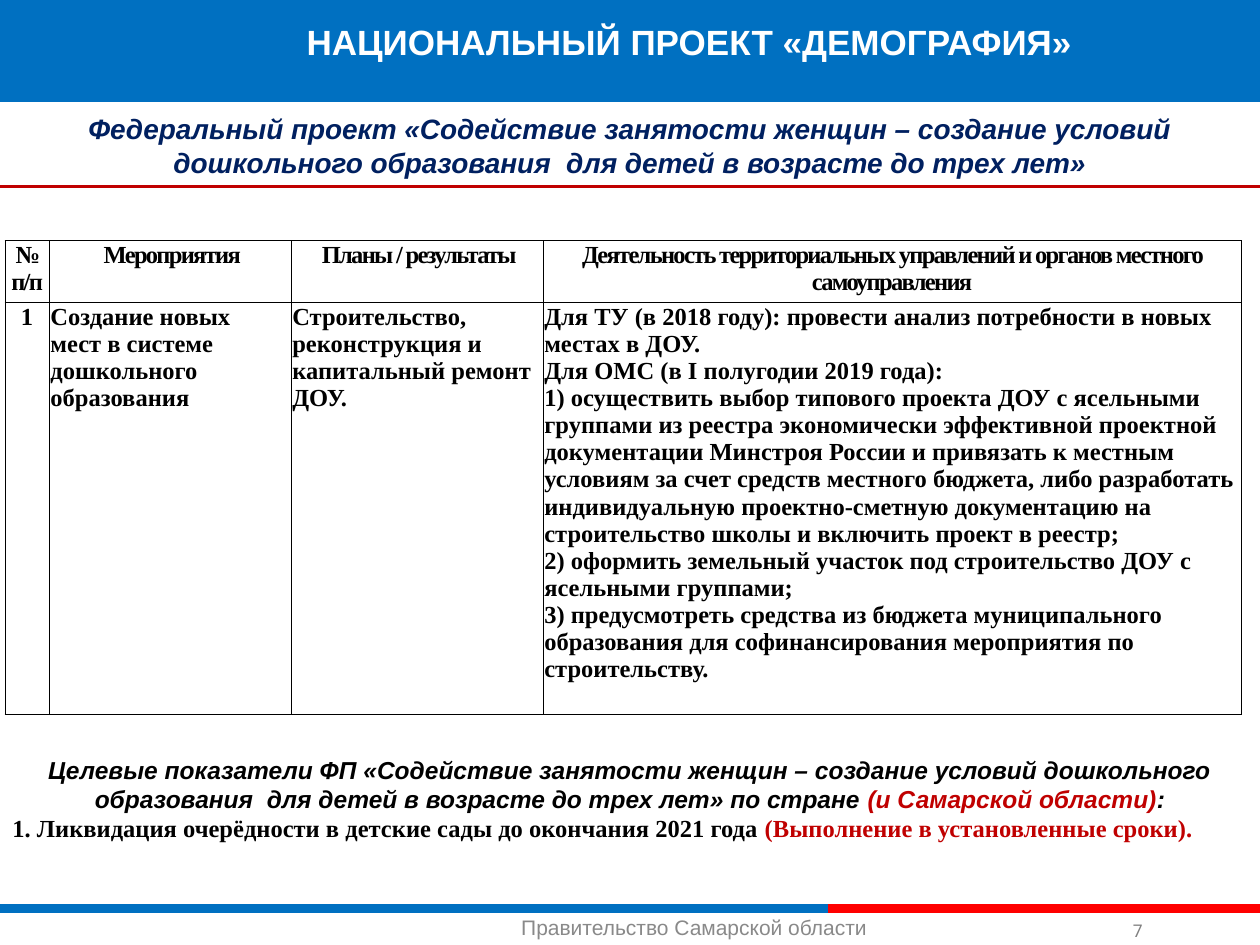
from lxml.etree import SubElement
from pptx import Presentation
from pptx.dml.color import RGBColor
from pptx.enum.shapes import MSO_CONNECTOR, MSO_SHAPE
from pptx.enum.text import MSO_ANCHOR, MSO_AUTO_SIZE, PP_ALIGN
from pptx.oxml.ns import qn
from pptx.util import Inches, Pt

BLUE = RGBColor(0x00, 0x70, 0xC1)
NAVY = RGBColor(0x00, 0x20, 0x60)
RED = RGBColor(0xFF, 0x00, 0x00)
DARK_RED = RGBColor(0xC0, 0x00, 0x00)
GRAY = RGBColor(0x89, 0x89, 0x89)
NUMBER_GRAY = RGBColor(0x80, 0x80, 0x80)
BLACK = RGBColor(0x00, 0x00, 0x00)
WHITE = RGBColor(0xFF, 0xFF, 0xFF)

SANS = "Arial"
SERIF = "Times New Roman"
NUMBER_FONT = "Roboto"
CENTER, LEFT = PP_ALIGN.CENTER, PP_ALIGN.LEFT

HEADERS = [
    "№ п/п",
    " Мероприятия",
    " Планы / результаты",
    "Деятельность территориальных управлений и органов местного самоуправления",
]
ACTIVITY = [
    ["1"],
    ["Создание новых", "мест в системе дошкольного образования"],
    ["Строительство, реконструкция и капитальный ремонт ДОУ."],
    [
        "Для ТУ (в 2018 году): провести анализ потребности в новых местах в ДОУ.",
        "Для ОМС (в I полугодии 2019 года):",
        "1) осуществить выбор типового проекта ДОУ с ясельными группами из реестра "
        "экономически эффективной проектной документации Минстроя России и привязать "
        "к местным условиям за счет средств местного бюджета, либо разработать "
        "индивидуальную проектно-сметную документацию на строительство школы и "
        "включить проект в реестр;",
        "2) оформить земельный участок под строительство ДОУ с ясельными группами;",
        "3) предусмотреть средства из бюджета муниципального образования для "
        "софинансирования мероприятия по строительству.",
    ],
]
FEDERAL_PROJECT = (
    "«Содействие занятости женщин – создание условий дошкольного "
    "образования  для детей в возрасте до трех лет»"
)


class SlideBuilder:
    def __init__(self, slide):
        self.slide = slide

    def add_run(self, paragraph, text, size, color, font=SANS, bold=False,
                italic=False, spacing=0):
        """Spacing is the extra distance between letters in points."""
        run = paragraph.add_run()
        run.text = text
        run.font.name = font
        run.font.size = Pt(size)
        run.font.color.rgb = color
        run.font.bold = bold
        run.font.italic = italic
        if spacing:
            run.font._element.set("spc", str(spacing * 100))

    def fill_frame(self, frame, paragraphs):
        """Each paragraph is an alignment and a list of (text, style) runs."""
        for index, (alignment, runs) in enumerate(paragraphs):
            paragraph = frame.paragraphs[0] if index == 0 else frame.add_paragraph()
            paragraph.alignment = alignment
            for text, style in runs:
                self.add_run(paragraph, text, **style)

    def set_frame(self, shape, paragraphs, inset, anchor, wrap):
        frame = shape.text_frame
        frame.auto_size = MSO_AUTO_SIZE.NONE
        frame.word_wrap = wrap
        frame.vertical_anchor = anchor
        frame.margin_left = frame.margin_right = Inches(inset)
        frame.margin_top = frame.margin_bottom = Inches(0.05)
        self.fill_frame(frame, paragraphs)

    def add_text(self, box, paragraphs, inset=0.1, anchor=MSO_ANCHOR.TOP, wrap=True):
        shape = self.slide.shapes.add_textbox(*map(Inches, box))
        self.set_frame(shape, paragraphs, inset, anchor, wrap)

    def set_title(self, box, text, style):
        title = self.slide.shapes.title
        title.left, title.top, title.width, title.height = map(Inches, box)
        self.set_frame(title, [(CENTER, [(text, style)])], 0.05, MSO_ANCHOR.TOP, True)
        # The placeholder comes first in the tree; it belongs above the band.
        self.slide.shapes._spTree.append(title._element)

    def add_band(self, box, color):
        band = self.slide.shapes.add_shape(MSO_SHAPE.RECTANGLE, *map(Inches, box))
        band.shadow.inherit = False
        band.fill.solid()
        band.fill.fore_color.rgb = color
        band.line.fill.background()

    def add_rule(self, left, right, top, color, width):
        rule = self.slide.shapes.add_connector(
            MSO_CONNECTOR.STRAIGHT,
            Inches(left), Inches(top), Inches(right), Inches(top))
        rule.line.color.rgb = color
        rule.line.width = Pt(width)
        SubElement(rule._element.spPr, qn("a:effectLst"))

    def add_borders(self, cell, color, width):
        properties = cell._tc.get_or_add_tcPr()
        for side in ("a:lnL", "a:lnR", "a:lnT", "a:lnB"):
            line = SubElement(properties, qn(side), w=str(Pt(width)))
            fill = SubElement(line, qn("a:solidFill"))
            SubElement(fill, qn("a:srgbClr"), val=str(color))

    def add_table(self, left, top, column_widths, row_heights, rows):
        table = self.slide.shapes.add_table(
            len(rows), len(column_widths), Inches(left), Inches(top),
            Inches(sum(column_widths)), Inches(sum(row_heights))).table
        table.first_row = table.horz_banding = False
        for column, width in zip(table.columns, column_widths):
            column.width = Inches(width)
        for row, height, contents in zip(table.rows, row_heights, rows):
            row.height = Inches(height)
            for cell, paragraphs in zip(row.cells, contents):
                cell.margin_left = cell.margin_right = cell.margin_top = Inches(0.01)
                cell.margin_bottom = 0
                self.add_borders(cell, BLACK, 0.5)
                cell.fill.solid()
                cell.fill.fore_color.rgb = WHITE
                self.fill_frame(cell.text_frame, paragraphs)


def main():
    presentation = Presentation()
    presentation.slide_width = Inches(10)
    presentation.slide_height = Inches(7.5)
    slide = presentation.slides.add_slide(presentation.slide_layouts[5])
    builder = SlideBuilder(slide)

    builder.add_rule(0, 6.57, 7.21, BLUE, 5)
    builder.add_text((2.24, 7.21, 6.54, 0.29), [
        (CENTER, [("Правительство Самарской области", dict(size=12, color=GRAY))]),
    ], inset=0.05)
    builder.add_rule(6.57, 10, 7.21, RED, 5)
    builder.add_band((0, -0.03, 10, 0.84), BLUE)
    builder.add_text((8.94, 7.27, 0.19, 0.25), [
        (LEFT, [("7", dict(size=10, color=NUMBER_GRAY, font=NUMBER_FONT))]),
    ], inset=0.05, anchor=MSO_ANCHOR.BOTTOM, wrap=False)
    builder.set_title((0.94, 0.11, 9.06, 0.44), "НАЦИОНАЛЬНЫЙ ПРОЕКТ «ДЕМОГРАФИЯ»",
                      dict(size=20, color=WHITE, bold=True))

    table_style = dict(size=14, color=BLACK, font=SERIF, bold=True)
    header_style = dict(table_style, spacing=-1)
    header_row = [[(CENTER, [(text, header_style)])] for text in HEADERS]
    activity_row = [
        [(LEFT if column else CENTER, [(text, table_style)]) for text in texts]
        for column, texts in enumerate(ACTIVITY)
    ]
    builder.add_table(0.04, 1.91, [0.35, 1.92, 2, 5.54], [0.49, 3.27],
                      [header_row, activity_row])

    builder.add_text((0, 0.84, 10, 0.64), [
        (CENTER, [("Федеральный проект " + FEDERAL_PROJECT,
                   dict(size=16, color=NAVY, bold=True, italic=True))]),
    ])
    builder.add_rule(0, 10, 1.48, DARK_RED, 2)

    target_style = dict(size=14, color=BLACK, bold=True, italic=True)
    builder.add_text((0, 5.94, 10, 0.81), [
        (CENTER, [
            ("Целевые показатели ФП " + FEDERAL_PROJECT + " по стране ", target_style),
            ("(и Самарской области)", dict(target_style, color=DARK_RED)),
            (":", target_style),
        ]),
        (LEFT, [
            ("1. Ликвидация очерёдности в детские сады до окончания 2021 года ",
             table_style),
            ("(Выполнение в установленные сроки).", dict(table_style, color=DARK_RED)),
        ]),
    ])

    presentation.save("out.pptx")


if __name__ == "__main__":
    main()
